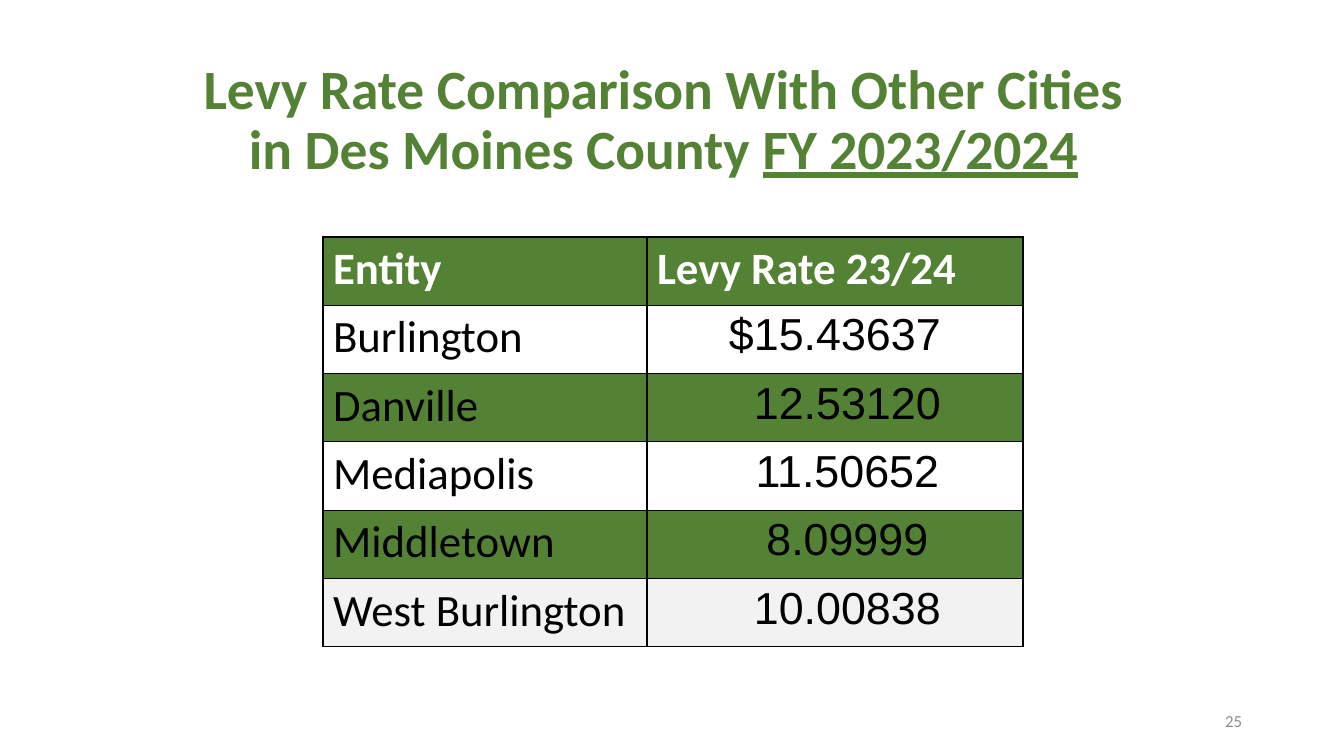
from lxml import etree
from pptx import Presentation, util as u
from pptx.dml.color import RGBColor
from pptx.enum import text
from pptx.oxml.ns import qn

GREEN, WHITE, BLACK, PALE, GREY = "548235", "FFFFFF", "000000", "F2F2F2", "8C8C8C"


def px(n):
    return u.Emu(round(n * 914400 / 100.8))


def style(p, size, color, name="Calibri", bold=False):
    p.font.size, p.font.name, p.font.bold = u.Pt(size), name, bold
    p.font.color.rgb = RGBColor.from_string(color)


prs = Presentation()
prs.slide_width, prs.slide_height = px(1344), px(756)
s = prs.slides.add_slide(prs.slide_layouts[6])

# Title
tf = s.shapes.add_textbox(px(193), px(42), px(941), px(159)).text_frame
tf.word_wrap = True
tf.margin_left = tf.margin_right = px(5)
tf.vertical_anchor = text.MSO_ANCHOR.MIDDLE
p = tf.paragraphs[0]
p.alignment, p.line_spacing = text.PP_ALIGN.CENTER, 0.9
style(p, 39.6, GREEN, bold=True)
p.add_run().text = "Levy Rate Comparison With Other Cities in Des Moines County "
r = p.add_run()
r.text = "FY 2023/2024"
r.font.underline = True

# Levy rate table
rows = [
    ("Entity", "Levy Rate 23/24", GREEN),
    ("Burlington", "$15.43637", WHITE),
    ("Danville", "12.53120", GREEN),
    ("Mediapolis", "11.50652", WHITE),
    ("Middletown", "8.09999", GREEN),
    ("West Burlington", "10.00838", PALE),
]
table = s.shapes.add_table(len(rows), 2, px(323), px(237), px(700), px(410)).table
table.columns[0].width, table.columns[1].width = px(324), px(376)
for i, (entity, rate, fill) in enumerate(rows):
    table.rows[i].height = px(410 / len(rows))
    for j, value in enumerate((entity, rate)):
        cell = table.cell(i, j)
        cell.text = value
        p = cell.text_frame.paragraphs[0]
        if i == 0:
            style(p, 32, WHITE, bold=True)
        elif j == 0:
            style(p, 32, BLACK)
        else:
            style(p, 32, BLACK, "Arial")
            p.alignment = text.PP_ALIGN.CENTER
            # Rates without a dollar sign sit a little to the right
            if not value.startswith("$"):
                cell.margin_left = px(35)

        # Borders come before the fill in the cell properties
        tcPr = cell._tc.get_or_add_tcPr()
        for side in ("a:lnL", "a:lnR", "a:lnT", "a:lnB"):
            ln = etree.SubElement(tcPr, qn(side), w=str(u.Pt(1)))
            solid = etree.SubElement(ln, qn("a:solidFill"))
            etree.SubElement(solid, qn("a:srgbClr"), val=BLACK)
        cell.fill.solid()
        cell.fill.fore_color.rgb = RGBColor.from_string(fill)

# Slide number
tf = s.shapes.add_textbox(px(950), px(701), px(302), px(40)).text_frame
tf.word_wrap = True
tf.vertical_anchor = text.MSO_ANCHOR.MIDDLE
p = tf.paragraphs[0]
p.text = "25"
p.alignment = text.PP_ALIGN.RIGHT
style(p, 12, GREY)

prs.save("out.pptx")
